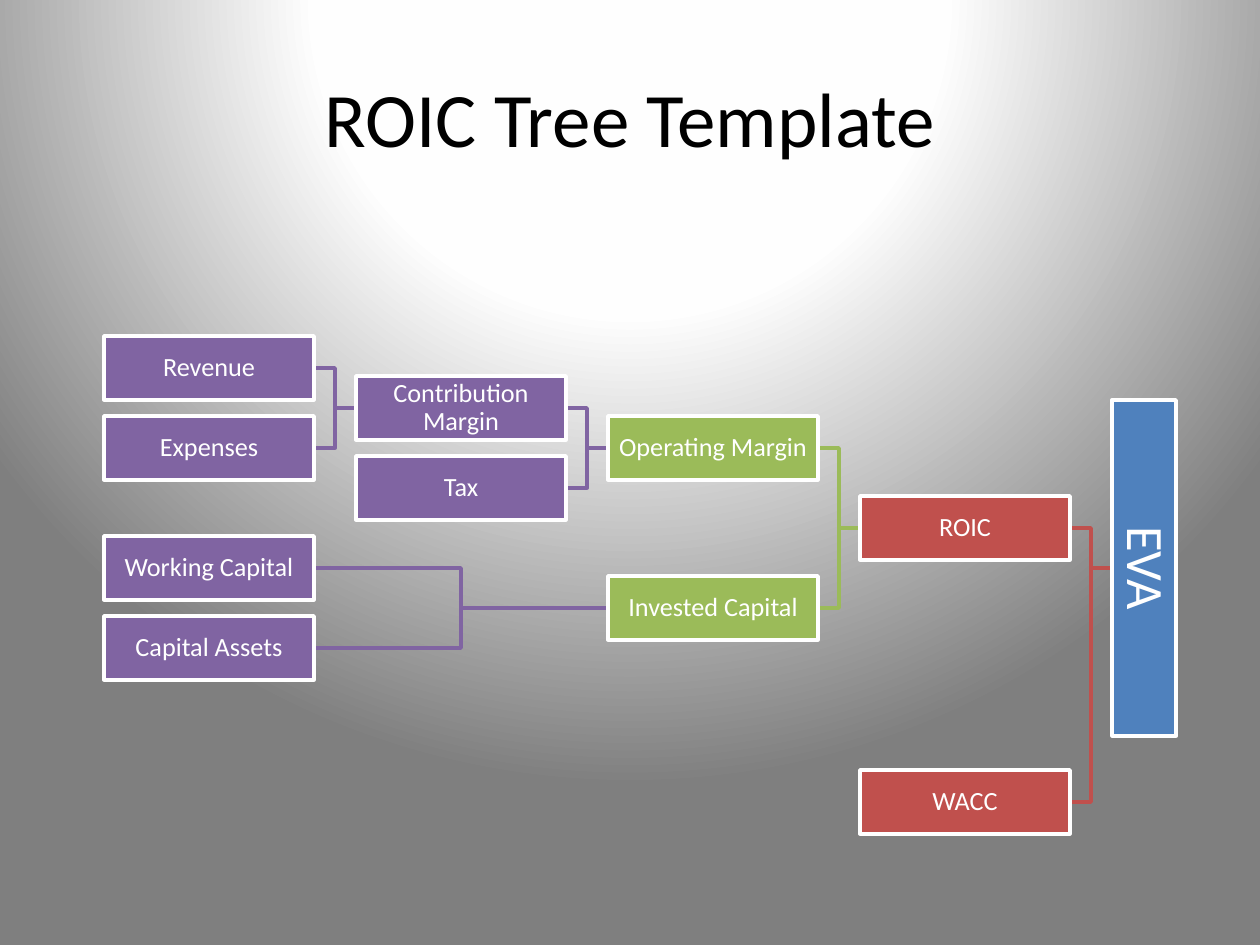
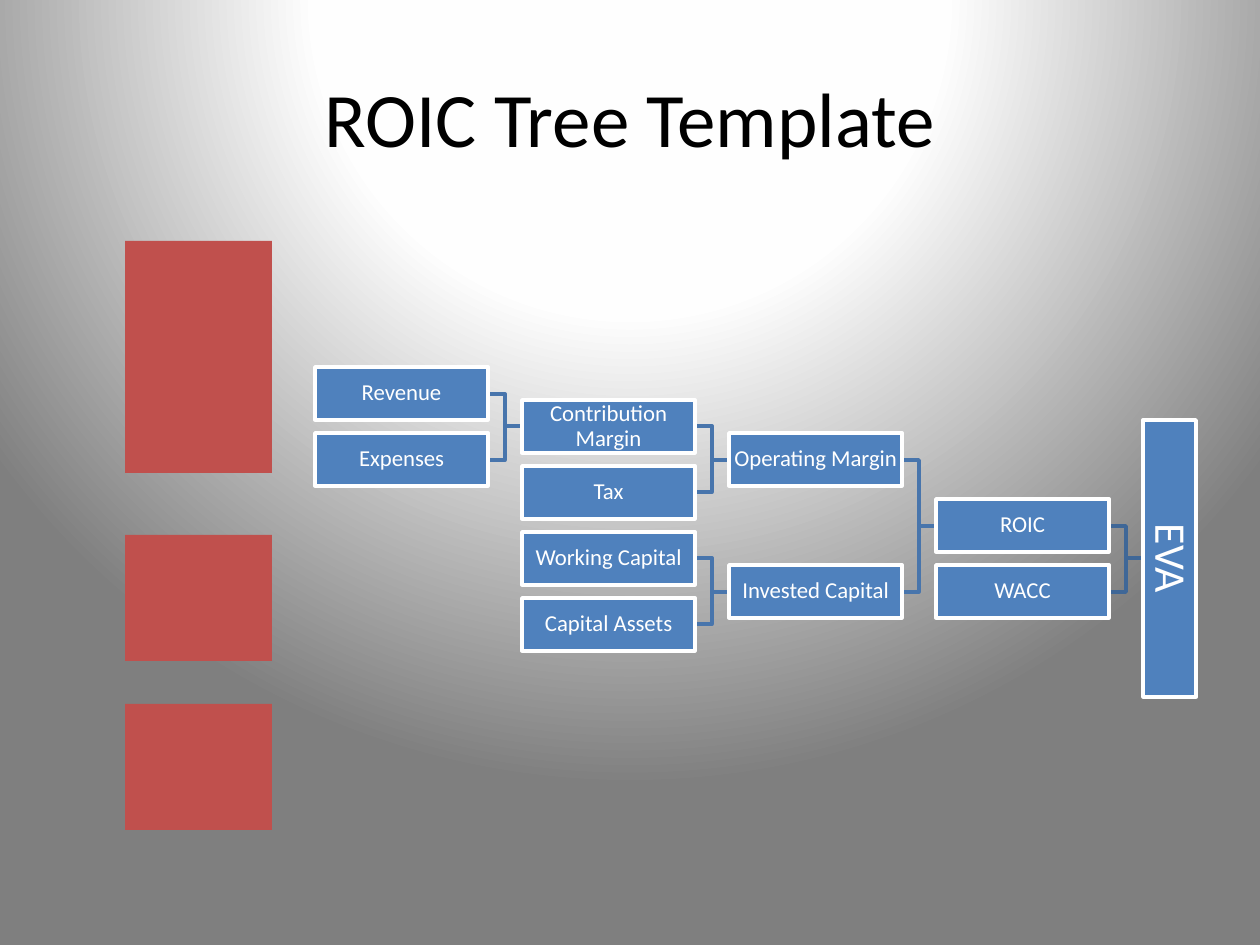
"""Builds two slides with a ROIC tree, one coloured by level and one in a single colour."""
from dataclasses import dataclass

from pptx import Presentation
from pptx.dml.color import RGBColor
from pptx.enum.shapes import MSO_SHAPE
from pptx.enum.text import MSO_ANCHOR, PP_ALIGN
from pptx.oxml import parse_xml
from pptx.oxml.ns import nsdecls
from pptx.util import Emu, Pt

PX = 914400 / 126


@dataclass(frozen=True)
class Theme:
    """Colours, font and sizes shared by the slides."""
    font: str = "Calibri"
    title_size: int = 44
    line_width: int = 2
    black: str = "000000"
    white: str = "FFFFFF"
    blue: str = "4F81BD"
    red: str = "C0504D"
    green: str = "9BBB59"
    purple: str = "8064A2"
    dark_blue: str = "3F6797"
    mid_blue: str = "4875AC"
    glow: tuple = ((0, "FFFFFF"), (40, "FEFEFE"), (100, "7F7F7F"))


THEME = Theme()


@dataclass(frozen=True)
class Node:
    """One measure: what it feeds, its level from the root and its half-row."""
    label: str
    parent: str
    level: int
    row: int


TREE = [
    Node("EVA", "", 0, 5),
    Node("ROIC", "EVA", 1, 4),
    Node("Operating Margin", "ROIC", 2, 2),
    Node("Contribution Margin", "Operating Margin", 3, 1),
    Node("Revenue", "Contribution Margin", 4, 0),
    Node("Expenses", "Contribution Margin", 4, 2),
    Node("Tax", "Operating Margin", 3, 3),
    Node("Invested Capital", "ROIC", 2, 6),
    Node("Working Capital", "Invested Capital", 3, 5),
    Node("Capital Assets", "Invested Capital", 3, 7),
    Node("WACC", "EVA", 1, 6),
]
LAST_COLUMN = max(node.level for node in TREE)


@dataclass(frozen=True)
class TreeStyle:
    """Box sizes and steps in px, type sizes, and colours by level."""
    box: tuple
    column_step: int
    row_step: int
    root_length: int
    root_size: int
    label_size: int
    fills: tuple
    lines: tuple


LEVEL_COLOURS = (THEME.blue, THEME.red, THEME.green, THEME.purple, THEME.purple)
COLOURED = TreeStyle((210, 64), 252, 40, 336, 30, 15, LEVEL_COLOURS, LEVEL_COLOURS)
PLAIN = TreeStyle((173, 53), 207, 33, 277, 25, 13, (THEME.blue,) * 5,
                  (THEME.blue, THEME.dark_blue) + (THEME.mid_blue,) * 3)


def px(length):
    """Turn px into EMU."""
    return Emu(round(length * PX))


def rgb(colour):
    """Turn a hex string into a colour."""
    return RGBColor.from_string(colour)


def set_background(master):
    """Give the master a white glow that falls off from the top centre."""
    master.background.fill.solid()
    properties = master.element.xpath("./p:cSld/p:bg/p:bgPr")[0]
    stops = "".join(f'<a:gs pos="{place * 1000}"><a:srgbClr val="{colour}"/></a:gs>'
                    for place, colour in THEME.glow)
    properties.replace(properties[0], parse_xml(
        f'<a:gradFill {nsdecls("a")} rotWithShape="1"><a:gsLst>{stops}</a:gsLst>'
        '<a:path path="circle"><a:fillToRect l="50000" t="-80000" r="50000" b="180000"/>'
        '</a:path></a:gradFill>'))


def style_text(frame, text, size, colour):
    """Fill a frame with one centred paragraph."""
    frame.text = text
    frame.word_wrap = True
    frame.vertical_anchor = MSO_ANCHOR.MIDDLE
    paragraph = frame.paragraphs[0]
    paragraph.alignment = PP_ALIGN.CENTER
    paragraph.font.name = THEME.font
    paragraph.font.size = Pt(size)
    paragraph.font.color.rgb = rgb(colour)
    return paragraph


def add_titled_slide(deck, title):
    """Add a title-only slide with its heading."""
    slide = deck.slides.add_slide(deck.slide_layouts[5])
    heading = slide.shapes.title
    heading.left, heading.top, heading.width, heading.height = map(px, (63, 38, 1134, 157))
    style_text(heading.text_frame, title, THEME.title_size, THEME.black)
    return slide


def add_block(slide, left, top, width, height, fill):
    """Add a flat rectangle without an outline."""
    block = slide.shapes.add_shape(MSO_SHAPE.RECTANGLE, *map(px, (left, top, width, height)))
    block.shadow.inherit = False
    block.fill.solid()
    block.fill.fore_color.rgb = rgb(fill)
    block.line.fill.background()
    return block


def add_measure(slide, node, left, middle, style):
    """Add a labelled box centred on the given height; the root is turned upright."""
    width, height = style.box
    size = style.label_size
    is_root = not node.parent
    if is_root:
        left += (height - style.root_length) / 2
        width, size = style.root_length, style.root_size
    measure = add_block(slide, left, middle - height / 2, width, height, style.fills[node.level])
    measure.rotation = 90 if is_root else 0
    measure.line.color.rgb = rgb(THEME.white)
    measure.line.width = Pt(THEME.line_width)
    frame = measure.text_frame
    frame.margin_left = frame.margin_right = frame.margin_top = frame.margin_bottom = px(1)
    style_text(frame, node.label, size, THEME.white).line_spacing = 0.9


def add_branch(slide, parent, child, colour):
    """Draw the elbow from a parent's left edge to a child's right edge."""
    bend = (parent[0] + child[0]) / 2
    builder = slide.shapes.build_freeform(*parent, scale=PX)
    builder.add_line_segments([(bend, parent[1]), (bend, child[1]), child], close=False)
    branch = builder.convert_to_shape()
    branch.shadow.inherit = False
    branch.fill.background()
    branch.line.color.rgb = rgb(colour)
    branch.line.width = Pt(THEME.line_width)


def add_tree(slide, left, top, style, columns=None, rows=None):
    """Place the tree from its top left corner; columns and rows move single measures."""
    columns, rows = columns or {}, rows or {}
    width, height = style.box
    spots = {}
    for node in TREE:
        column = columns.get(node.label, LAST_COLUMN - node.level)
        row = rows.get(node.label, node.row)
        spots[node.label] = (left + column * style.column_step,
                             top + row * style.row_step + height / 2)
    for node in TREE:
        if node.parent:
            x, middle = spots[node.label]
            add_branch(slide, spots[node.parent], (x + width, middle), style.lines[node.level])
    for node in TREE:
        add_measure(slide, node, *spots[node.label], style)


def add_side_blocks(slide, left, top):
    """Stack the three empty red blocks beside the tree."""
    for offset, height in ((0, 232), (294, 126), (463, 126)):
        add_block(slide, left, top + offset, 147, height, THEME.red)


def main():
    """Build and save the deck."""
    deck = Presentation()
    deck.slide_width, deck.slide_height = px(1260), px(945)
    set_background(deck.slide_master)
    title = "ROIC Tree Template"
    add_tree(add_titled_slide(deck, title), 104, 336, COLOURED,
             columns={"Working Capital": 0, "Capital Assets": 0}, rows={"WACC": 10.85})
    plain_slide = add_titled_slide(deck, title)
    add_tree(plain_slide, 315, 367, PLAIN)
    add_side_blocks(plain_slide, 125, 241)
    deck.save("out.pptx")


if __name__ == "__main__":
    main()
